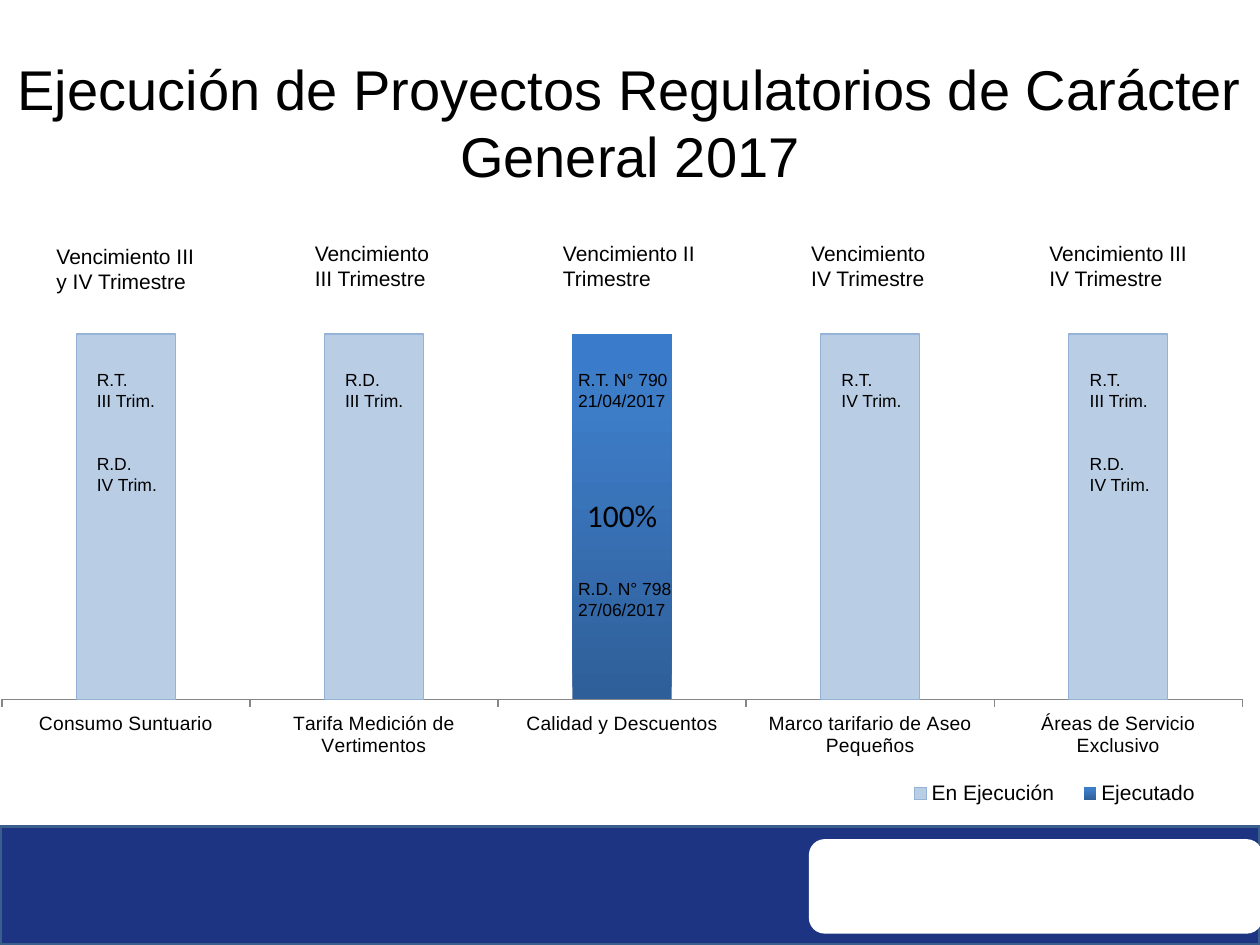
from copy import deepcopy
from typing import NamedTuple

from lxml import etree
from pptx import Presentation
from pptx.chart.data import CategoryChartData
from pptx.dml.color import RGBColor
from pptx.enum.chart import XL_CHART_TYPE, XL_LEGEND_POSITION, XL_TICK_MARK
from pptx.enum.shapes import MSO_SHAPE
from pptx.enum.text import PP_ALIGN
from pptx.oxml import parse_xml
from pptx.oxml.ns import nsdecls, qn
from pptx.util import Inches, Pt

COLUMN_STACKED = XL_CHART_TYPE.COLUMN_STACKED
LEGEND_RIGHT = XL_LEGEND_POSITION.RIGHT
TICK_OUT, TICK_NONE = XL_TICK_MARK.OUTSIDE, XL_TICK_MARK.NONE
RECTANGLE, ROUNDED = MSO_SHAPE.RECTANGLE, MSO_SHAPE.ROUNDED_RECTANGLE
LEFT, CENTER = PP_ALIGN.LEFT, PP_ALIGN.CENTER

BLACK, WHITE = "000000", "FFFFFF"
BAR_PITCH = 1.97
NOTE_TOP = 2.88
MILESTONE_GAP = 24


class Box(NamedTuple):
    left: float
    top: float
    width: float
    height: float


class Project(NamedTuple):
    name: str
    deadline: str
    deadline_box: Box
    milestones: list[str]  # the second line of each is its date
    done: int


PROJECTS = [
    Project("Consumo Suntuario", "Vencimiento III y IV Trimestre",
            Box(0.35, 1.88, 1.34, 0.5), ["R.T.\nIII Trim.", "R.D.\nIV Trim."], 0),
    Project("Tarifa Medición de Vertimentos", "Vencimiento III Trimestre",
            Box(2.4, 1.86, 1.26, 0.5), ["R.D.\nIII Trim."], 0),
    Project("Calidad y Descuentos", "Vencimiento II Trimestre",
            Box(4.37, 1.86, 1.26, 0.5), ["R.T. N° 790\n21/04/2017", "R.D. N° 798\n27/06/2017"], 1),
    Project("Marco tarifario de Aseo Pequeños", "Vencimiento IV Trimestre",
            Box(6.34, 1.86, 1.26, 0.5), ["R.T.\nIV Trim."], 0),
    Project("Áreas de Servicio Exclusivo", "Vencimiento III IV Trimestre",
            Box(8.23, 1.86, 1.34, 0.5), ["R.T.\nIII Trim.", "R.D.\nIV Trim."], 0),
]


def rgb(value: str) -> RGBColor:
    return RGBColor.from_string(value)


def inches(box: Box) -> list:
    return [Inches(length) for length in box]


def set_font(font, size: float, name: str = "Arial") -> None:
    font.size, font.name = Pt(size), name
    font.color.rgb = rgb(BLACK)


def add_text(slide, box: Box, text: str, size: float, align=LEFT):
    frame = slide.shapes.add_textbox(*inches(box)).text_frame
    frame.word_wrap = True
    frame.text = text
    for paragraph in frame.paragraphs:
        paragraph.alignment = align
        for run in paragraph.runs:
            set_font(run.font, size)
    return frame


def add_panel(slide, kind, box: Box, fill: str, line: str = "") -> None:
    panel = slide.shapes.add_shape(kind, *inches(box))
    panel.shadow.inherit = False
    panel.fill.solid()
    panel.fill.fore_color.rgb = rgb(fill)
    if line:
        panel.line.color.rgb = rgb(line)
        panel.line.width = Pt(2)
    else:
        panel.line.fill.background()


def set_layout(element, box: Box, inner: bool = False) -> None:
    """Place a chart part by fractions of the chart area."""
    layout = element.get_or_add_layout() if hasattr(element, "get_or_add_layout") else element.find(qn("c:layout"))
    if layout is None:
        layout = etree.Element(qn("c:layout"))
        element.insert(0, layout)
    for child in list(layout):
        layout.remove(child)
    manual = etree.SubElement(layout, qn("c:manualLayout"))
    settings = [("layoutTarget", "inner")] if inner else []
    settings += [("xMode", "edge"), ("yMode", "edge")]
    settings += zip("xywh", box)
    for tag, value in settings:
        etree.SubElement(manual, qn(f"c:{tag}")).set("val", str(value))


def fill_gradient(fill, series, stops: list[tuple[float, str]]) -> None:
    fill.gradient()
    fill.gradient_angle = 90
    stop_list = next(series._element.iter(qn("a:gsLst")))
    stop_list.append(deepcopy(stop_list[-1]))
    for stop, (position, color) in zip(fill.gradient_stops, stops):
        stop.position = position
        stop.color.rgb = rgb(color)


def add_progress_chart(slide) -> None:
    data = CategoryChartData(number_format="0%")
    data.categories = [project.name for project in PROJECTS]
    data.add_series("Ejecutado", [project.done for project in PROJECTS])
    data.add_series("En Ejecución", [1] * len(PROJECTS))
    chart = slide.shapes.add_chart(COLUMN_STACKED, *inches(Box(0.01, 2.49, 9.95, 4.03)), data).chart
    chart.has_title = False
    set_font(chart.font, 18, "Calibri")

    # Axes
    categories, values = chart.category_axis, chart.value_axis
    categories.major_tick_mark, categories.minor_tick_mark = TICK_OUT, TICK_NONE
    categories.format.line.color.rgb = rgb("868686")
    set_font(categories.tick_labels.font, 11)
    values.minimum_scale, values.maximum_scale = 0.1, 1
    values.has_major_gridlines = False
    values.visible = False

    # Columns
    plot = chart.plots[0]
    plot.gap_width, plot.overlap = 150, 100
    plot.vary_by_categories = False
    executed, running = plot.series
    fill_gradient(executed.format.fill, executed, [(0, "2F5F99"), (0.8, "3D7CC7"), (1, "3A7CCB")])
    running.format.fill.solid()
    running.format.fill.fore_color.rgb = rgb("B9CDE5")
    running.format.line.color.rgb = rgb("95B3D7")
    running.format.line.width = Pt(0.75)
    labels = executed.data_labels
    labels.show_value = True
    labels.number_format, labels.number_format_is_linked = "0%;;", False
    set_font(labels.font, 18, "Calibri")

    # Legend and plot position
    chart.has_legend = True
    legend = chart.legend
    legend.position = LEGEND_RIGHT
    legend.include_in_layout = False
    set_font(legend.font, 12)
    plot_area = chart._chartSpace.chart.plotArea
    set_layout(plot_area, Box(0, 0.04, 0.99, 0.72), inner=True)
    legend_element = legend._element
    if legend_element.find(qn("c:layout")) is None:
        legend_element.find(qn("c:legendPos")).addnext(etree.Element(qn("c:layout")))
    set_layout(legend_element, Box(0.71, 0.91, 0.26, 0.07))


def add_title(slide) -> None:
    title = add_text(slide, Box(0.04, 0.38, 9.92, 1.18),
                     "Ejecución de Proyectos Regulatorios de Carácter General 2017", 32, CENTER)
    shadow = parse_xml(
        f'<a:effectLst {nsdecls("a")}><a:outerShdw blurRad="38100" dist="38100" dir="2700000" algn="tl">'
        '<a:srgbClr val="000000"><a:alpha val="43000"/></a:srgbClr></a:outerShdw></a:effectLst>')
    run_properties = title.paragraphs[0].runs[0].font._element
    run_properties.find(qn("a:solidFill")).addnext(shadow)


def add_project_notes(slide, index: int, project: Project) -> None:
    add_text(slide, project.deadline_box, project.deadline, 12)
    if project.done:
        # Dated resolutions stand apart, above and below the percentage
        for top, milestone in zip((NOTE_TOP, 4.54), project.milestones):
            add_text(slide, Box(4.49, top, 1.06, 0.47), milestone, 10)
        return
    height = 1.5 if len(project.milestones) > 1 else 0.71
    note = add_text(slide, Box(0.67 + index * BAR_PITCH, NOTE_TOP, 0.71, height),
                    "\n".join(project.milestones), 10)
    for paragraph in note.paragraphs[2::2]:
        paragraph.space_before = Pt(MILESTONE_GAP)
    note.word_wrap = False


def main() -> None:
    deck = Presentation()
    deck.slide_width, deck.slide_height = Inches(10), Inches(7.5)
    slide = deck.slides.add_slide(deck.slide_layouts[6])

    # Footer band
    add_panel(slide, RECTANGLE, Box(0, 6.56, 10, 0.94), "1C3481", "3A5F8C")
    add_panel(slide, ROUNDED, Box(6.42, 6.66, 3.6, 0.75), WHITE)

    add_title(slide)
    add_progress_chart(slide)
    for index, project in enumerate(PROJECTS):
        add_project_notes(slide, index, project)
    deck.save("out.pptx")


if __name__ == "__main__":
    main()
